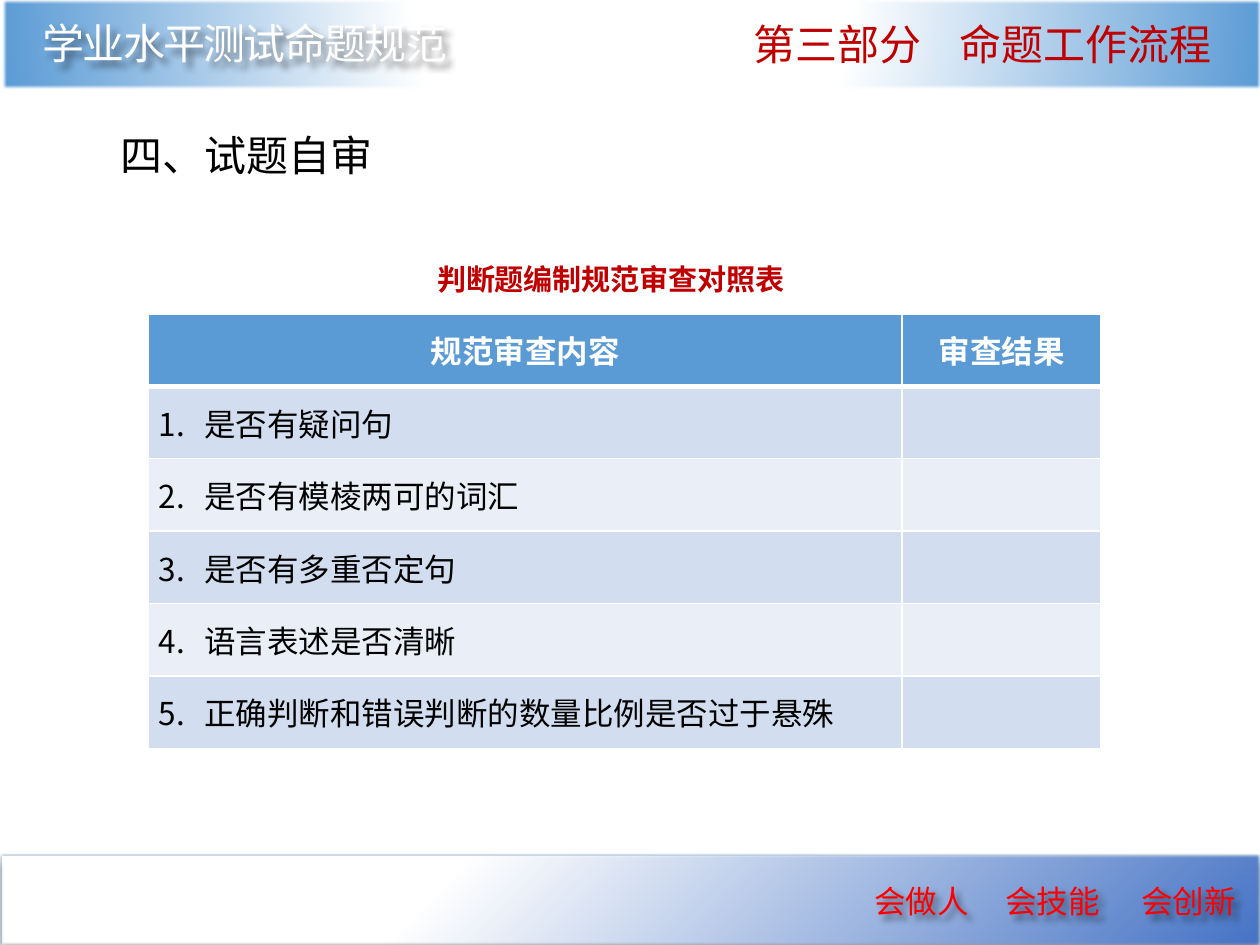
import pptx
import pptx.dml.color
import pptx.enum.shapes
import pptx.enum.text
import pptx.oxml
import pptx.oxml.ns
import pptx.util
from pptx.util import Inches

RGBColor = pptx.dml.color.RGBColor
WHITE = RGBColor(0xFF, 0xFF, 0xFF)
BLACK = RGBColor(0, 0, 0)
RED = RGBColor(0xFF, 0, 0)
DARK_RED = RGBColor(0xC0, 0, 0)
SKY = RGBColor(0x5B, 0x9B, 0xD5)
ROYAL = RGBColor(0x44, 0x72, 0xC4)
OUTLINE = RGBColor(0x43, 0x73, 0x9E)
BANDS = (RGBColor(0xD2, 0xDE, 0xEF), RGBColor(0xEA, 0xEF, 0xF7))

SC = "Noto Sans CJK SC"
JP = "Noto Sans CJK JP"
LATIN = "Calibri"
CHECKS = ("是否有疑问句", "是否有模棱两可的词汇", "是否有多重否定句",
          "语言表述是否清晰", "正确判断和错误判断的数量比例是否过于悬殊")


def xml(tag, attributes="", inner=""):
    """Return a drawing element built from its tag, attributes and content."""
    namespace = pptx.oxml.ns.nsdecls("a")
    return pptx.oxml.parse_xml(f"<a:{tag} {namespace} {attributes}>{inner}</a:{tag}>")


def color_xml(color, inner=""):
    """Return the markup of one colour."""
    return f'<a:srgbClr val="{color}">{inner}</a:srgbClr>'


def add_effects(shape, shadow=None, soft_edge=None):
    """Give a shape a shadow (blur, distance, degrees, opacity) and soft edges in points."""
    shape.shadow.inherit = False
    effects = shape._element.spPr.find(pptx.oxml.ns.qn("a:effectLst"))
    if shadow:
        blur, distance, angle, opacity = shadow
        effects.append(xml(
            "outerShdw",
            f'blurRad="{pptx.util.Pt(blur)}" dist="{pptx.util.Pt(distance)}" '
            f'dir="{angle * 60000}" algn="tl" rotWithShape="0"',
            color_xml(BLACK, f'<a:alpha val="{opacity * 1000}"/>')))
    if soft_edge:
        effects.append(xml("softEdge", f'rad="{pptx.util.Pt(soft_edge)}"'))


def add_run(paragraph, text, size, color, font=LATIN, bold=False):
    """Add one styled run to a paragraph."""
    run = paragraph.add_run()
    run.text = text
    run.font.size = pptx.util.Pt(size)
    run.font.bold = bold
    run.font.color.rgb = color
    run.font.name = font
    east_asian = SC if font == LATIN else font
    run._r.get_or_add_rPr().append(xml("ea", f'typeface="{east_asian}"'))
    return run


def add_label(slide, box, text, size, color, font=SC, bold=False, tabs=()):
    """Add a one-line text box with optional tab stops."""
    label = slide.shapes.add_textbox(*box)
    label.text_frame.word_wrap = True
    paragraph = label.text_frame.paragraphs[0]
    if tabs:
        stops = "".join(f'<a:tab pos="{Inches(tab)}" algn="l"/>' for tab in tabs)
        paragraph._p.get_or_add_pPr().append(xml("tabLst", "", stops))
    add_run(paragraph, text, size, color, font, bold)
    return label


def add_band(slide, box, color, focus):
    """Add a rectangle that fades radially from white to a colour."""
    band = slide.shapes.add_shape(pptx.enum.shapes.MSO_SHAPE.RECTANGLE, *box)
    band.line.fill.background()
    band.fill.gradient()
    stops = "".join(f'<a:gs pos="{place * 1000}">{color_xml(tone)}</a:gs>'
                    for place, tone in ((0, WHITE), (35, WHITE), (100, color)))
    edges = " ".join(f'{side}="{value * 1000}"' for side, value in zip("ltrb", focus))
    gradient = xml("gradFill", 'rotWithShape="1"',
                   f'<a:gsLst>{stops}</a:gsLst><a:path path="circle">'
                   f'<a:fillToRect {edges}/></a:path>')
    properties = band._element.spPr
    properties.replace(properties.find(pptx.oxml.ns.qn("a:gradFill")), gradient)
    return band


def add_header(slide, left, top, width, height):
    """Place the top band with the course title and the part title."""
    band = add_band(slide, (left, top, width, height), SKY, (50, -80, 50, 180))
    add_effects(band, soft_edge=2)
    course = add_label(slide, (left + Inches(0.23), top + Inches(0.1), Inches(3.6), Inches(0.5)),
                       "学业水平测试命题规范", 24, WHITE)
    course.text_frame.paragraphs[0].runs[0]._r.get_or_add_rPr().set("spc", "-100")
    add_effects(course, shadow=(4, 4, 45, 45))
    add_label(slide, (left + Inches(5.87), top + Inches(0.11), Inches(4.01), Inches(0.5)),
              "第三部分\t命题工作流程", 24, DARK_RED, tabs=(1.64,))


def add_footer(slide, left, top, width, height):
    """Place the bottom band with the motto."""
    band = add_band(slide, (left, top, width, height), ROYAL, (0, 0, 100, 100))
    band.line.color.rgb = OUTLINE
    band.line.width = pptx.util.Pt(1)
    add_effects(band, shadow=(4, 4, 90, 38), soft_edge=1)
    motto = add_label(slide, (left + Inches(6.84), top + Inches(0.17), Inches(3.45), Inches(0.4)),
                      "会做人\t会技能\t会创新", 18, RED, JP, tabs=(1.04, 2.12))
    add_effects(motto, shadow=(4, 4, 45, 45))


def fill_cell(cell, color, bottom_width=1):
    """Fill a cell and draw its white borders."""
    cell.vertical_anchor = pptx.enum.text.MSO_ANCHOR.MIDDLE
    cell.margin_left = cell.margin_right = Inches(0.08)
    cell.margin_top = cell.margin_bottom = Inches(0.04)
    cell.fill.solid()
    cell.fill.fore_color.rgb = color
    properties = cell._tc.get_or_add_tcPr()
    for index, (side, width) in enumerate(zip("LRTB", (1, 1, 1, bottom_width))):
        properties.insert(index, xml(f"ln{side}", f'w="{pptx.util.Pt(width)}"',
                                     f"<a:solidFill>{color_xml(WHITE)}</a:solidFill>"))


def add_review_table(slide, left, top, width, height):
    """Place the review table with its caption above it."""
    caption = add_label(slide, (left + Inches(2.19), top - Inches(0.43), Inches(3.19), Inches(0.43)),
                        "判断题编制规范审查对照表", 16.6, DARK_RED, LATIN, True)
    caption.text_frame.paragraphs[0].line_spacing = 0.9
    table = slide.shapes.add_table(len(CHECKS) + 1, 2, left, top, width, height).table
    result_width = Inches(1.58)
    table.columns[0].width = width - result_width
    table.columns[1].width = result_width
    for cell, heading in zip(table.rows[0].cells, ("规范审查内容", "审查结果")):
        fill_cell(cell, SKY, 3)
        paragraph = cell.text_frame.paragraphs[0]
        paragraph.alignment = pptx.enum.text.PP_ALIGN.CENTER
        add_run(paragraph, heading, 18, WHITE, bold=True)
    for number, check in enumerate(CHECKS, 1):
        for cell in table.rows[number].cells:
            fill_cell(cell, BANDS[(number - 1) % 2])
        paragraph = table.cell(number, 0).text_frame.paragraphs[0]
        layout = paragraph._p.get_or_add_pPr()
        layout.set("marL", str(Inches(0.36)))
        layout.set("indent", str(-Inches(0.36)))
        layout.append(xml("buFont", f'typeface="{LATIN}"'))
        layout.append(xml("buAutoNum", f'type="arabicPeriod" startAt="{number}"'))
        add_run(paragraph, check, 18, BLACK)


def main():
    """Build and save the slide."""
    deck = pptx.Presentation()
    deck.slide_width, deck.slide_height = Inches(10), Inches(7.5)
    slide = deck.slides.add_slide(deck.slide_layouts[6])
    add_footer(slide, Inches(0), Inches(6.78), Inches(10), Inches(0.72))
    add_header(slide, Inches(0.01), Inches(-0.01), Inches(10), Inches(0.72))
    add_label(slide, (Inches(0.86), Inches(0.98), Inches(5.01), Inches(0.5)),
              "四、试题自审", 24, BLACK)
    add_review_table(slide, Inches(1.18), Inches(2.49), Inches(7.56), Inches(3.45))
    deck.save("out.pptx")


if __name__ == "__main__":
    main()
